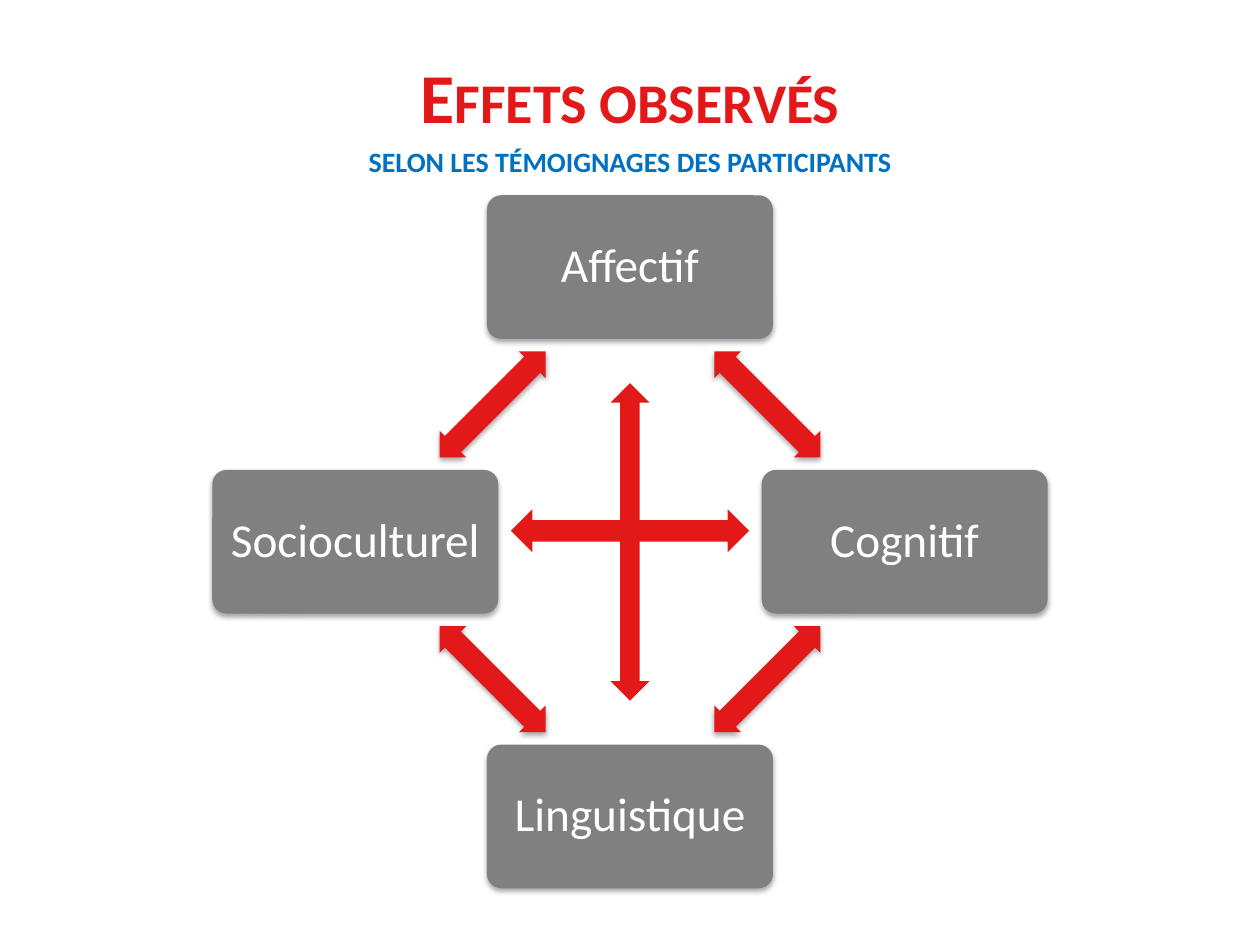
from lxml.etree import SubElement
from pptx import Presentation
from pptx.dml.color import RGBColor
from pptx.enum.shapes import MSO_SHAPE
from pptx.enum.text import MSO_ANCHOR, PP_ALIGN
from pptx.oxml.ns import qn
from pptx.util import Inches, Pt

WIDE, HIGH = 10, 7.5
MID_X, MID_Y = WIDE / 2, 4.3
STEP = 2.18
RED, BLUE, GREY, WHITE = "E31818", "0070C0", "808080", "FFFFFF"
NODES = [("Affectif", 0, -1), ("Cognitif", 1, 0),
         ("Linguistique", 0, 1), ("Socioculturel", -1, 0)]
LINKS = [(0.5, -0.5, 45), (0.5, 0.5, 135), (-0.5, 0.5, 225), (-0.5, -0.5, 315)]


def tint(color, code):
    """Set a fill or font colour from a hex string."""
    color.rgb = RGBColor.from_string(code)


def add_run(para, text, size, code):
    """Append one styled run to a paragraph."""
    run = para.add_run()
    run.text = text
    run.font.name = "Calibri"
    run.font.size = Pt(size)
    tint(run.font.color, code)
    return run


def add_head(slide):
    """Add the two-line title in bold small capitals."""
    box = slide.shapes.add_textbox(Inches(0.05 * WIDE), Inches(0.04 * HIGH),
                                   Inches(0.9 * WIDE), Inches(1.25))
    frame = box.text_frame
    frame.word_wrap = True
    frame.vertical_anchor = MSO_ANCHOR.MIDDLE
    para = frame.paragraphs[0]
    para.alignment = PP_ALIGN.CENTER
    top = add_run(para, "Effets observés", 40, RED)
    para.add_line_break()
    sub = add_run(para, "selon les témoignages des participants", 20, BLUE)
    for run in (top, sub):
        run.font.bold = True
        run._r.get_or_add_rPr().set("cap", "small")


def add_form(slide, kind, col, row, size, code, turn=0):
    """Add a plain shape centred on a grid point counted from the middle."""
    wide, high = size
    left = MID_X + col * STEP - wide / 2
    top = MID_Y + row * STEP - high / 2
    form = slide.shapes.add_shape(kind, Inches(left), Inches(top),
                                  Inches(wide), Inches(high))
    form.shadow.inherit = False
    form.fill.solid()
    tint(form.fill.fore_color, code)
    form.line.fill.background()
    form.rotation = turn
    return form


def add_shade(form):
    """Give a shape a soft shadow straight below it."""
    effects = form._element.spPr.find(qn("a:effectLst"))
    shade = SubElement(effects, qn("a:outerShdw"), blurRad=str(Pt(3.1)),
                       dist=str(Pt(1.8)), dir="5400000", rotWithShape="0")
    color = SubElement(shade, qn("a:srgbClr"), val="000000")
    SubElement(color, qn("a:alpha"), val="35000")


def add_node(slide, text, col, row):
    """Add one labelled rounded box."""
    node = add_form(slide, MSO_SHAPE.ROUNDED_RECTANGLE, col, row,
                    (2.27, 1.14), GREY)
    node.adjustments[0] = 0.1
    add_shade(node)
    frame = node.text_frame
    frame.word_wrap = True
    frame.vertical_anchor = MSO_ANCHOR.MIDDLE
    frame.margin_left = frame.margin_right = Inches(0.05)
    para = frame.paragraphs[0]
    para.alignment = PP_ALIGN.CENTER
    para.line_spacing = 0.9
    add_run(para, text, 27, WHITE)


def add_link(slide, col, row, turn):
    """Add one slanted double arrow between neighbouring boxes."""
    link = add_form(slide, MSO_SHAPE.LEFT_RIGHT_ARROW, col, row,
                    (1.19, 0.3), RED, turn)
    link.adjustments[0] = 0.6
    link.adjustments[1] = 0.5
    add_shade(link)


def main():
    """Build and save the slide."""
    deck = Presentation()
    deck.slide_width, deck.slide_height = Inches(WIDE), Inches(HIGH)
    slide = deck.slides.add_slide(deck.slide_layouts[6])
    add_head(slide)
    for node, link in zip(NODES, LINKS):
        add_node(slide, *node)
        add_link(slide, *link)
    add_form(slide, MSO_SHAPE.UP_DOWN_ARROW, 0, 0, (0.31, 2.52), RED)
    add_form(slide, MSO_SHAPE.UP_DOWN_ARROW, 0, -0.04, (0.34, 1.89), RED, 90)
    deck.save("out.pptx")


if __name__ == "__main__":
    main()
